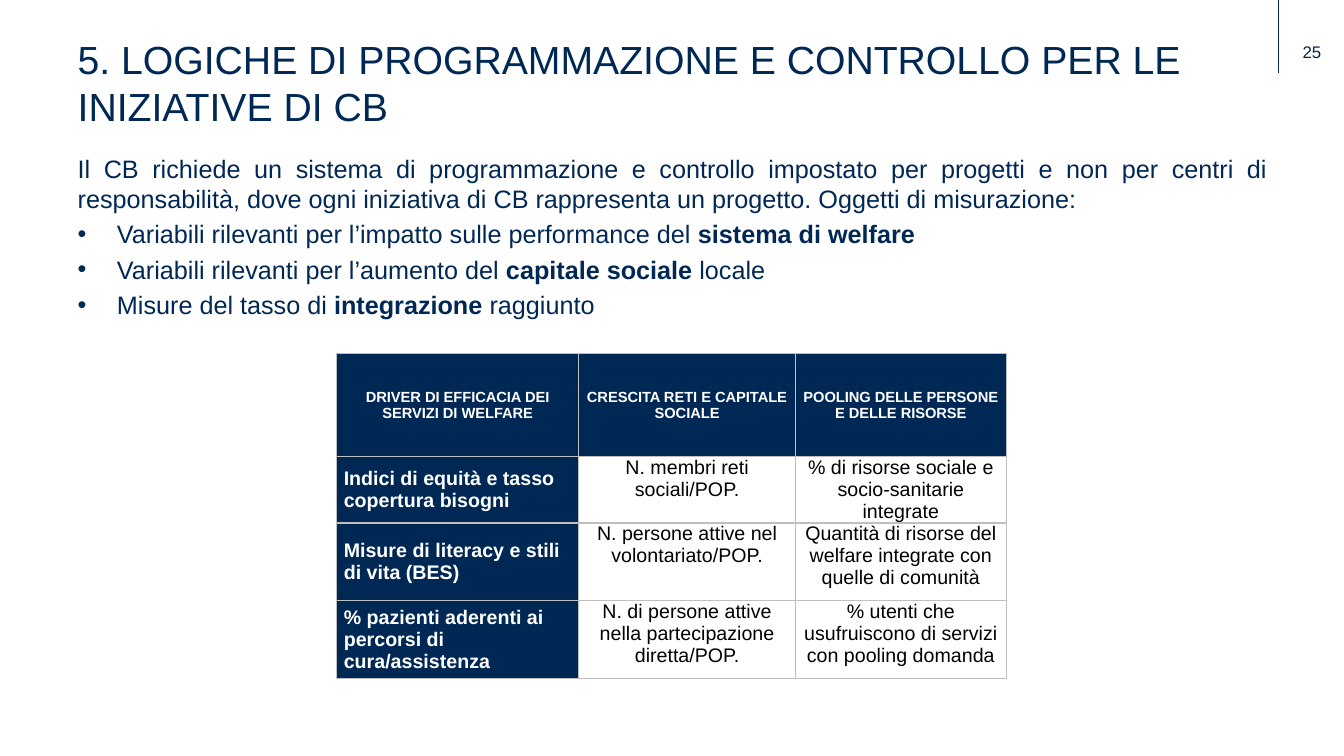
from lxml import etree
from pptx import Presentation
from pptx import util as u
from pptx.dml.color import RGBColor
from pptx.enum import shapes, text
from pptx.oxml.ns import qn

NAVY, WHITE, BLACK, GREY = "002855", "FFFFFF", "000000", "BFBFBF"
TITLE = "5. LOGICHE DI PROGRAMMAZIONE E CONTROLLO PER LE INIZIATIVE DI CB"
INTRO = ("Il CB richiede un sistema di programmazione e controllo impostato per "
         "progetti e non per centri di responsabilità, dove ogni iniziativa di CB "
         "rappresenta un progetto. Oggetti di misurazione:")
# Each bullet: text before, bold text, text after
BULLETS = [
    ("Variabili rilevanti per l’impatto sulle performance del ", "sistema di welfare", ""),
    ("Variabili rilevanti per l’aumento del ", "capitale sociale ", "locale"),
    ("Misure del tasso di ", "integrazione", " raggiunto"),
]
MEASURES = [
    ("DRIVER DI EFFICACIA DEI SERVIZI DI WELFARE",
     "CRESCITA RETI E CAPITALE SOCIALE",
     "POOLING DELLE PERSONE E DELLE RISORSE"),
    ("Indici di equità e tasso copertura bisogni",
     "N. membri reti sociali/POP.",
     "% di risorse sociale e socio-sanitarie integrate"),
    ("Misure di literacy e stili di vita (BES)",
     "N. persone attive nel volontariato/POP.",
     "Quantità di risorse del welfare integrate con quelle di comunità"),
    ("% pazienti aderenti ai percorsi di cura/assistenza",
     "N. di persone attive nella partecipazione diretta/POP.",
     "% utenti che usufruiscono di servizi con pooling domanda"),
]
COLUMN_WIDTHS = (2.4, 2.15, 2.09)
ROW_HEIGHTS = (1.02, 0.66, 0.77, 0.77)


def colour(value):
    return RGBColor.from_string(value)


def apply(target, values):
    for name, value in values.items():
        setattr(target, name, value)


def add_span(para, words, size, shade=NAVY, bold=False):
    span = para.add_run()
    span.text = words
    apply(span.font, {"name": "Arial", "size": u.Pt(size), "bold": bold})
    span.font.color.rgb = colour(shade)


def place(box, left, top, width, height):
    apply(box, {"left": u.Inches(left), "top": u.Inches(top),
                "width": u.Inches(width), "height": u.Inches(height)})
    apply(box.text_frame, {"word_wrap": True, "auto_size": text.MSO_AUTO_SIZE.NONE,
                           "vertical_anchor": text.MSO_ANCHOR.TOP})


def set_bullet(para, mark=None, indent=0):
    properties = para._p.get_or_add_pPr()
    properties.set("marL", str(u.Inches(indent)))
    properties.set("indent", str(-u.Inches(indent)))
    if mark:
        etree.SubElement(properties, qn("a:buFont"), typeface="Arial")
        etree.SubElement(properties, qn("a:buChar"), char=mark)
    else:
        etree.SubElement(properties, qn("a:buNone"))


def fill_title(box):
    place(box, 0.67, 0.3, 12, 1.25)
    para = box.text_frame.paragraphs[0]
    para.alignment = text.PP_ALIGN.LEFT
    add_span(para, TITLE, 28)


def fill_body(box):
    place(box, 0.67, 1.47, 12, 1.76)
    frame = box.text_frame
    intro = frame.paragraphs[0]
    set_bullet(intro)
    apply(intro, {"alignment": text.PP_ALIGN.JUSTIFY, "space_before": u.Pt(0)})
    add_span(intro, INTRO, 18)
    for parts in BULLETS:
        para = frame.add_paragraph()
        set_bullet(para, "•", 0.39)
        apply(para, {"alignment": text.PP_ALIGN.JUSTIFY, "space_before": u.Pt(3.6)})
        for words, bold in zip(parts, (False, True, False)):
            if words:
                add_span(para, words, 18, bold=bold)


def add_page_number(page, number):
    box = page.shapes.add_textbox(0, 0, 0, 0)
    place(box, 12.92, 0.41, 0.41, 0.4)
    apply(box.text_frame, dict.fromkeys(
        ("margin_left", "margin_top", "margin_right", "margin_bottom"), 0))
    add_span(box.text_frame.paragraphs[0], number, 12)


def add_rule(page, x, top, bottom):
    rule = page.shapes.add_connector(
        shapes.MSO_CONNECTOR.STRAIGHT,
        u.Inches(x), u.Inches(top), u.Inches(x), u.Inches(bottom))
    rule.line.color.rgb = colour(NAVY)
    rule.line.width = u.Pt(1)
    etree.SubElement(rule._element.spPr, qn("a:effectLst"))


def set_borders(cell):
    properties = cell._tc.get_or_add_tcPr()
    for side in ("lnL", "lnR", "lnT", "lnB"):
        line = etree.SubElement(properties, qn("a:" + side), w=str(u.Pt(1)))
        solid = etree.SubElement(line, qn("a:solidFill"))
        etree.SubElement(solid, qn("a:srgbClr"), val=GREY)


def fill_cell(cell, words, header, driver):
    dark = header or driver
    apply(cell, {"margin_left": u.Inches(0.07), "margin_right": u.Inches(0.07),
                 "margin_top": 0, "margin_bottom": 0,
                 "vertical_anchor": text.MSO_ANCHOR.MIDDLE if dark else text.MSO_ANCHOR.TOP})
    set_borders(cell)
    if dark:
        cell.fill.solid()
        cell.fill.fore_color.rgb = colour(NAVY)
    else:
        cell.fill.background()
    para = cell.text_frame.paragraphs[0]
    left = driver and not header
    para.alignment = text.PP_ALIGN.LEFT if left else text.PP_ALIGN.CENTER
    add_span(para, words, 10.5 if header else 14, WHITE if dark else BLACK, dark)


def add_measures(page):
    table = page.shapes.add_table(
        len(MEASURES), len(COLUMN_WIDTHS), u.Inches(3.34), u.Inches(3.51),
        u.Inches(sum(COLUMN_WIDTHS)), u.Inches(sum(ROW_HEIGHTS))).table
    for column, width in zip(table.columns, COLUMN_WIDTHS):
        column.width = u.Inches(width)
    for row, height in zip(table.rows, ROW_HEIGHTS):
        row.height = u.Inches(height)
    for r, row in enumerate(MEASURES):
        for c, words in enumerate(row):
            fill_cell(table.cell(r, c), words, r == 0, c == 0)


def main():
    deck = Presentation()
    deck.slide_width, deck.slide_height = u.Inches(13.33), u.Inches(7.5)
    page = deck.slides.add_slide(deck.slide_layouts[1])
    # Page corner
    add_page_number(page, "25")
    add_rule(page, 12.68, 0, 0.72)
    # Title and list
    fill_title(page.shapes.title)
    fill_body(page.placeholders[1])
    # Table of measures
    add_measures(page)
    deck.save("out.pptx")


if __name__ == "__main__":
    main()
